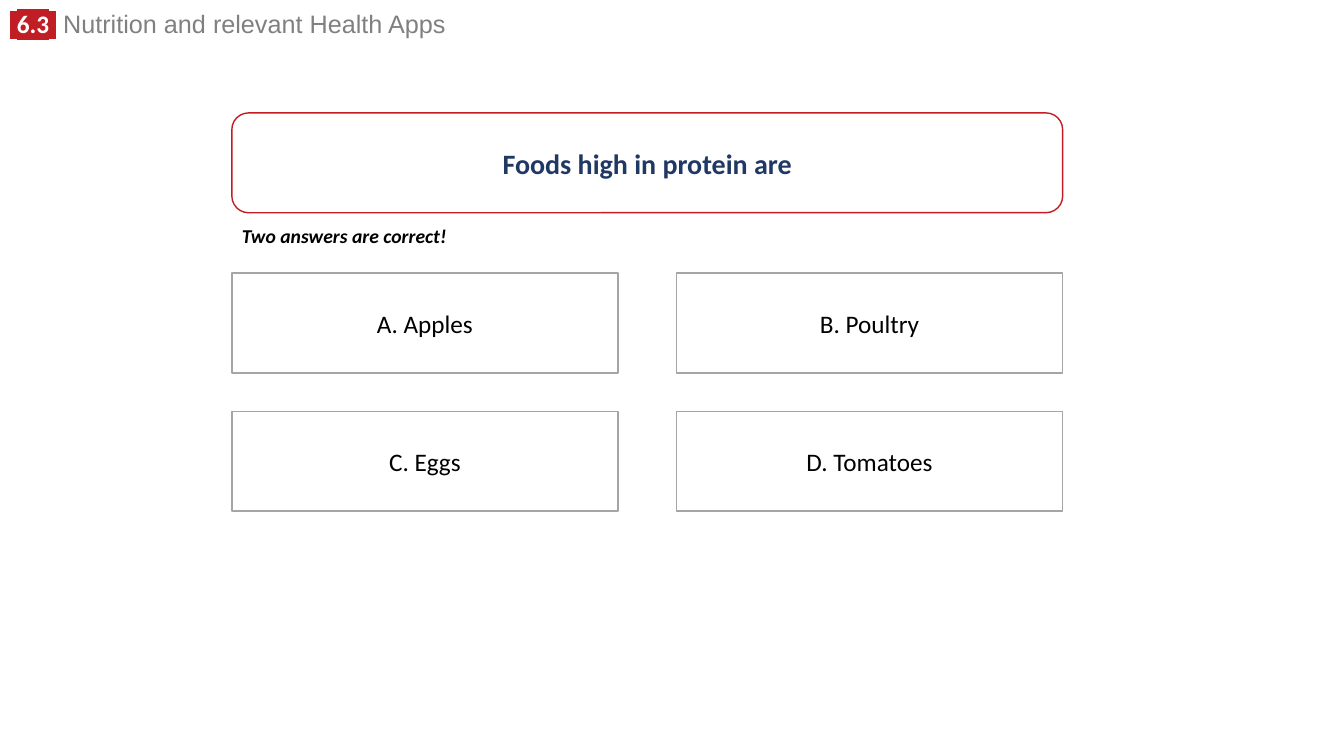
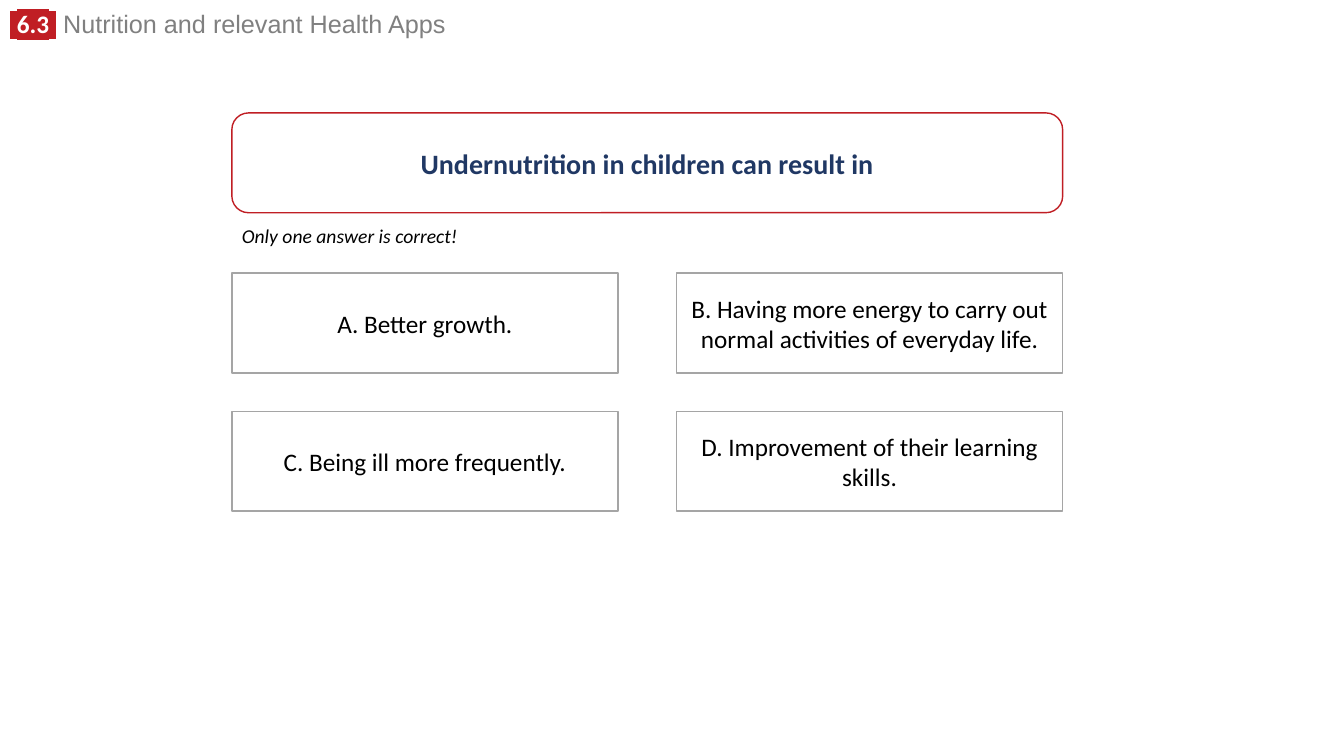
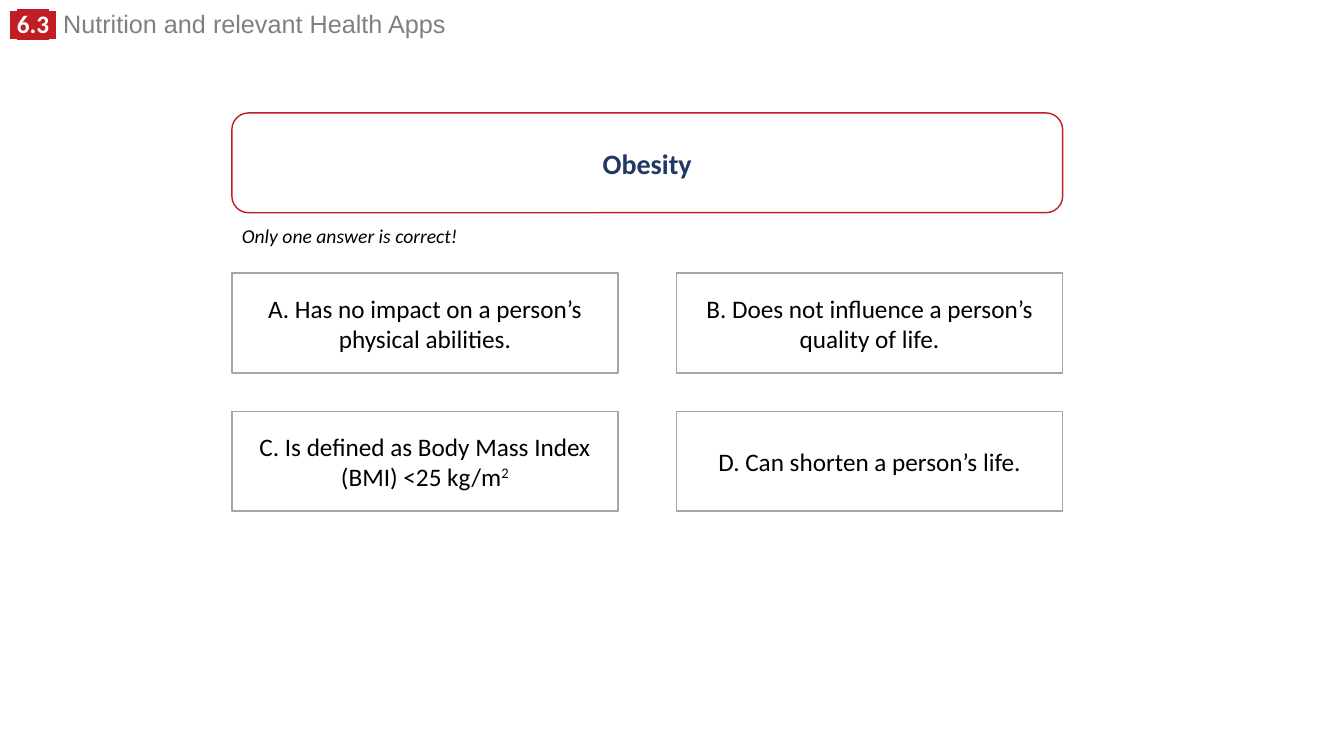
from dataclasses import dataclass

from lxml import etree
from pptx import Presentation
from pptx.dml.color import RGBColor
from pptx.enum.shapes import MSO_SHAPE as Shape
from pptx.enum.text import MSO_ANCHOR as Anchor, PP_ALIGN as Align
from pptx.oxml.ns import qn
from pptx.util import Inches, Pt


@dataclass(frozen=True)
class Theme:
    red: str = "C01E24"
    navy: str = "203864"
    gray: str = "808080"
    border: str = "A5A5A5"
    white: str = "FFFFFF"
    black: str = "000000"
    body_font: str = "Calibri"
    header_font: str = "Arial"
    question_size: int = 20
    text_size: int = 18
    note_size: int = 14


THEME = Theme()

LEFT = 2.3
QUESTION_TOP, QUESTION_WIDTH = 1.12, 8.24
NOTE_TOP = 2.17
ANSWER_TOP, ANSWER_WIDTH = 2.71, 3.83
BOX_HEIGHT = 0.99
COLUMN_STEP, ROW_STEP = 4.41, 1.37

ONE_CORRECT = "Only one answer is correct!"

QUIZ = [
    {
        "question": "Foods high in protein are",
        "note": "Two answers are correct!",
        "note_bold": True,
        "answers": ["A. Apples", "B. Poultry", "C. Eggs", "D. Tomatoes"],
    },
    {
        "question": "Undernutrition in children can result in",
        "note": ONE_CORRECT,
        "answers": [
            "A. Better growth.",
            "B. Having more energy to carry out normal activities of everyday life.",
            "C. Being ill more frequently.",
            "D. Improvement of their learning skills.",
        ],
    },
    {
        "question": "Obesity",
        "note": ONE_CORRECT,
        "answers": [
            "A. Has no impact on a person’s physical abilities.",
            "B. Does not influence a person’s quality of life.",
            ("C. Is defined as Body Mass Index (BMI) <25 kg/m", "2"),
            "D. Can shorten a person’s life.",
        ],
    },
]


def write(paragraph, text, size=THEME.text_size, font=THEME.body_font, color=THEME.black,
          bold=False, italic=False, highlight=None, superscript=False):
    run = paragraph.add_run()
    run.text = text
    run.font.size = Pt(size)
    run.font.name = font
    run.font.bold = bold
    run.font.italic = italic
    run.font.color.rgb = RGBColor.from_string(color)
    properties = run.font._element
    if highlight:
        # The schema places the highlight directly after the text fill.
        mark = etree.Element(qn("a:highlight"))
        etree.SubElement(mark, qn("a:srgbClr"), val=highlight)
        properties.find(qn("a:solidFill")).addnext(mark)
    if superscript:
        properties.set("baseline", "30000")


def add_label(slide, left, top, width, height):
    """Add a wrapping text box and return its first paragraph."""
    box = slide.shapes.add_textbox(Inches(left), Inches(top), Inches(width), Inches(height))
    box.text_frame.word_wrap = True
    return box.text_frame.paragraphs[0]


def add_box(slide, preset, left, top, width, line):
    """Add a white outlined box and return its centred paragraph."""
    box = slide.shapes.add_shape(preset, Inches(left), Inches(top), Inches(width), Inches(BOX_HEIGHT))
    box.shadow.inherit = False
    box.fill.solid()
    box.fill.fore_color.rgb = RGBColor.from_string(THEME.white)
    box.line.color.rgb = RGBColor.from_string(line)
    box.line.width = Pt(1)
    box.text_frame.word_wrap = True
    box.text_frame.vertical_anchor = Anchor.MIDDLE
    paragraph = box.text_frame.paragraphs[0]
    paragraph.alignment = Align.CENTER
    return paragraph


def add_header(slide):
    header = add_label(slide, 0, 0.09, 9.52, 0.35)
    header.line_spacing = 0.8
    badge = {"color": THEME.white, "bold": True, "highlight": THEME.red}
    write(header, " ", font=THEME.header_font, **badge)
    write(header, "6.3", **badge)
    write(header, " ", font=THEME.header_font, **badge)
    write(header, " Nutrition and relevant Health Apps", font=THEME.header_font, color=THEME.gray)


def add_question(slide, question):
    paragraph = add_box(slide, Shape.ROUNDED_RECTANGLE, LEFT, QUESTION_TOP, QUESTION_WIDTH, THEME.red)
    write(paragraph, question, size=THEME.question_size, color=THEME.navy, bold=True)


def add_note(slide, note, bold):
    paragraph = add_label(slide, LEFT, NOTE_TOP, 2.4, 0.34)
    write(paragraph, note, size=THEME.note_size, bold=bold, italic=True)


def add_answers(slide, answers):
    """Lay the answers out in two columns; a pair is text and its exponent."""
    for index, answer in enumerate(answers):
        row, column = divmod(index, 2)
        paragraph = add_box(slide, Shape.RECTANGLE, LEFT + column * COLUMN_STEP,
                            ANSWER_TOP + row * ROW_STEP, ANSWER_WIDTH, THEME.border)
        text, exponent = answer if isinstance(answer, tuple) else (answer, None)
        write(paragraph, text)
        if exponent:
            write(paragraph, exponent, superscript=True)


def main():
    deck = Presentation()
    deck.slide_width, deck.slide_height = Inches(13.33), Inches(7.5)
    blank = deck.slide_layouts[6]
    for item in QUIZ:
        slide = deck.slides.add_slide(blank)
        add_header(slide)
        add_question(slide, item["question"])
        add_note(slide, item["note"], item.get("note_bold", False))
        add_answers(slide, item["answers"])
    deck.save("out.pptx")


if __name__ == "__main__":
    main()
